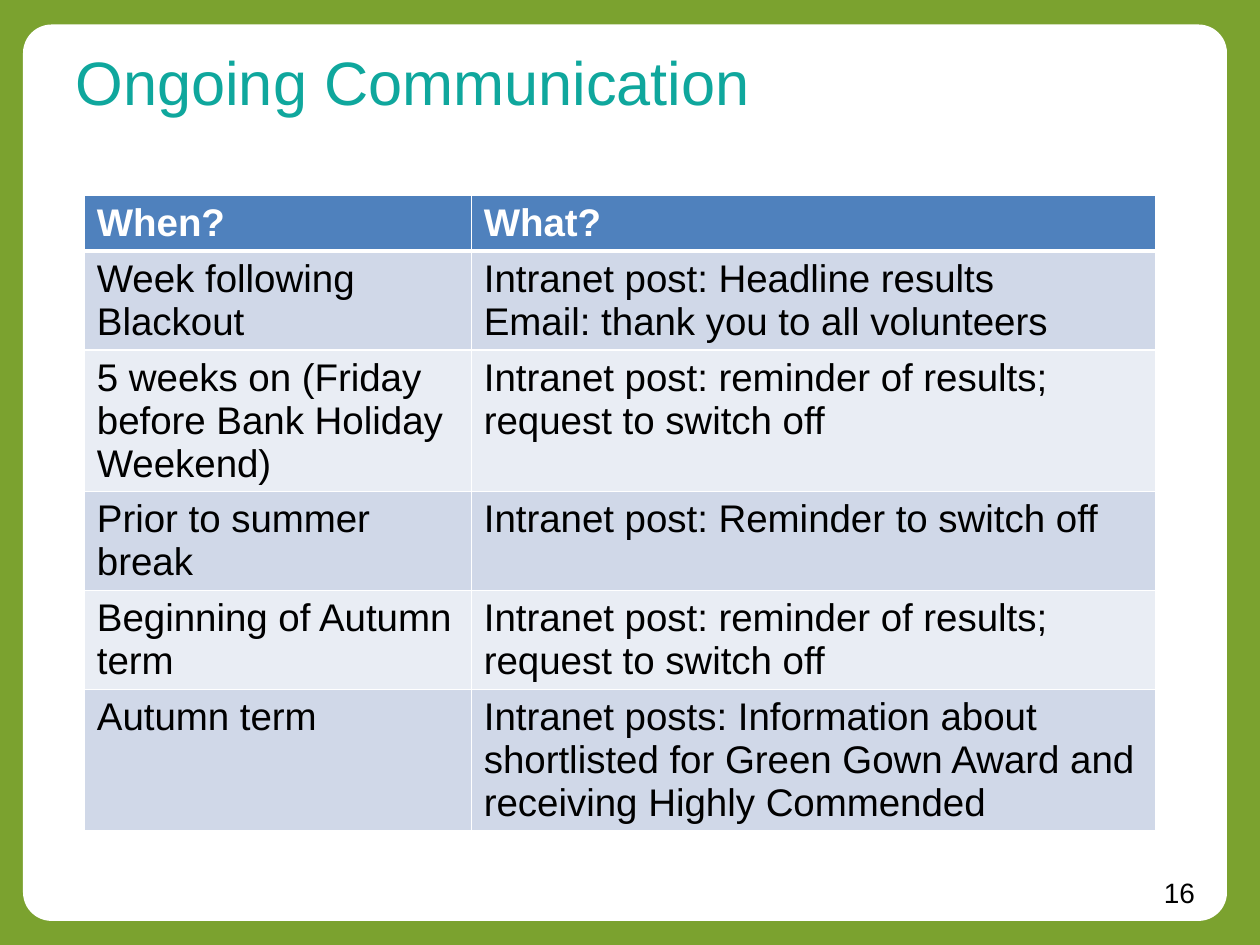
from lxml import etree
from pptx import Presentation
from pptx.dml.color import RGBColor
from pptx.enum.shapes import MSO_SHAPE
from pptx.enum.text import MSO_ANCHOR, PP_ALIGN
from pptx.oxml.ns import qn
from pptx.util import Cm, Pt

ROUND = MSO_SHAPE.ROUNDED_RECTANGLE
TOP = MSO_ANCHOR.TOP
LEFT, RIGHT = PP_ALIGN.LEFT, PP_ALIGN.RIGHT

# Content
TITLE = "Ongoing Communication"
PAGE = "16"
ROWS = [
    ("When?", "What?"),
    ("Week following Blackout",
     "Intranet post: Headline results\nEmail: thank you to all volunteers"),
    ("5 weeks on (Friday before Bank Holiday Weekend)",
     "Intranet post: reminder of results; request to switch off"),
    ("Prior to summer break", "Intranet post: Reminder to switch off"),
    ("Beginning of Autumn term",
     "Intranet post: reminder of results; request to switch off"),
    ("Autumn term",
     "Intranet posts: Information about shortlisted for Green Gown Award "
     "and receiving Highly Commended"),
]
WIDTHS = [7.8, 13.79]
ROW_H = 1.04
COLORS = {
    "green": "7BA22F", "white": "FFFFFF", "black": "000000", "teal": "0FA79D",
    "head": "4F81BD", "odd": "D0D8E8", "even": "E9EDF4",
}


def color(name):
    return RGBColor.from_string(COLORS[name])


def write(frame, text, size=22, ink="black", bold=False, align=LEFT):
    frame.word_wrap = True
    frame.text = text
    for para in frame.paragraphs:
        para.alignment = align
        font = para.font
        font.name, font.size, font.bold = "Arial", Pt(size), bold
        font.color.rgb = color(ink)


def edge(cell, widths):
    props = cell._tc.get_or_add_tcPr()
    for spot, (side, width) in enumerate(widths.items()):
        line = etree.Element(qn("a:ln" + side), w=str(Pt(width)))
        fill = etree.SubElement(line, qn("a:solidFill"))
        etree.SubElement(fill, qn("a:srgbClr"), val=COLORS["white"])
        props.insert(spot, line)


deck = Presentation()
deck.slide_width, deck.slide_height = Cm(25.4), Cm(19.05)
slide = deck.slides.add_slide(deck.slide_layouts[5])
shapes = slide.shapes

# Green frame around a white panel
back = slide.background.fill
back.solid()
back.fore_color.rgb = color("green")
panel = shapes.add_shape(ROUND, Cm(0.5), Cm(0.53), Cm(24.2), Cm(18))
panel.adjustments[0] = 0.03
panel.shadow.inherit = False
panel.fill.solid()
panel.fill.fore_color.rgb = color("white")
panel.line.color.rgb = color("white")
panel.line.width = Pt(2)
shapes._spTree.insert(2, panel._element)

# Title
title = shapes.title
title.left, title.top = Cm(1.27), Cm(0.76)
title.width, title.height = Cm(17.27), Cm(2.57)
title.text_frame.vertical_anchor = TOP
write(title.text_frame, TITLE, size=35, ink="teal")

# Schedule table
grid = shapes.add_table(len(ROWS), len(WIDTHS), Cm(1.7), Cm(3.94),
                        Cm(sum(WIDTHS)), Cm(ROW_H * len(ROWS))).table
for col, width in zip(grid.columns, WIDTHS):
    col.width = Cm(width)
for r, row in enumerate(ROWS):
    grid.rows[r].height = Cm(ROW_H)
    head = r == 0
    shade = "head" if head else "odd" if r % 2 else "even"
    for c, text in enumerate(row):
        cell = grid.cell(r, c)
        write(cell.text_frame, text, ink="white" if head else "black",
              bold=head)
        cell.fill.solid()
        cell.fill.fore_color.rgb = color(shade)
        edge(cell, {"L": 1, "R": 1, "T": 3 if r == 1 else 1,
                    "B": 3 if head else 1})

# Page number
page = shapes.add_textbox(Cm(18.54), Cm(17.53), Cm(5.8), Cm(0.94))
write(page.text_frame, PAGE, size=16, align=RIGHT)

deck.save("out.pptx")
